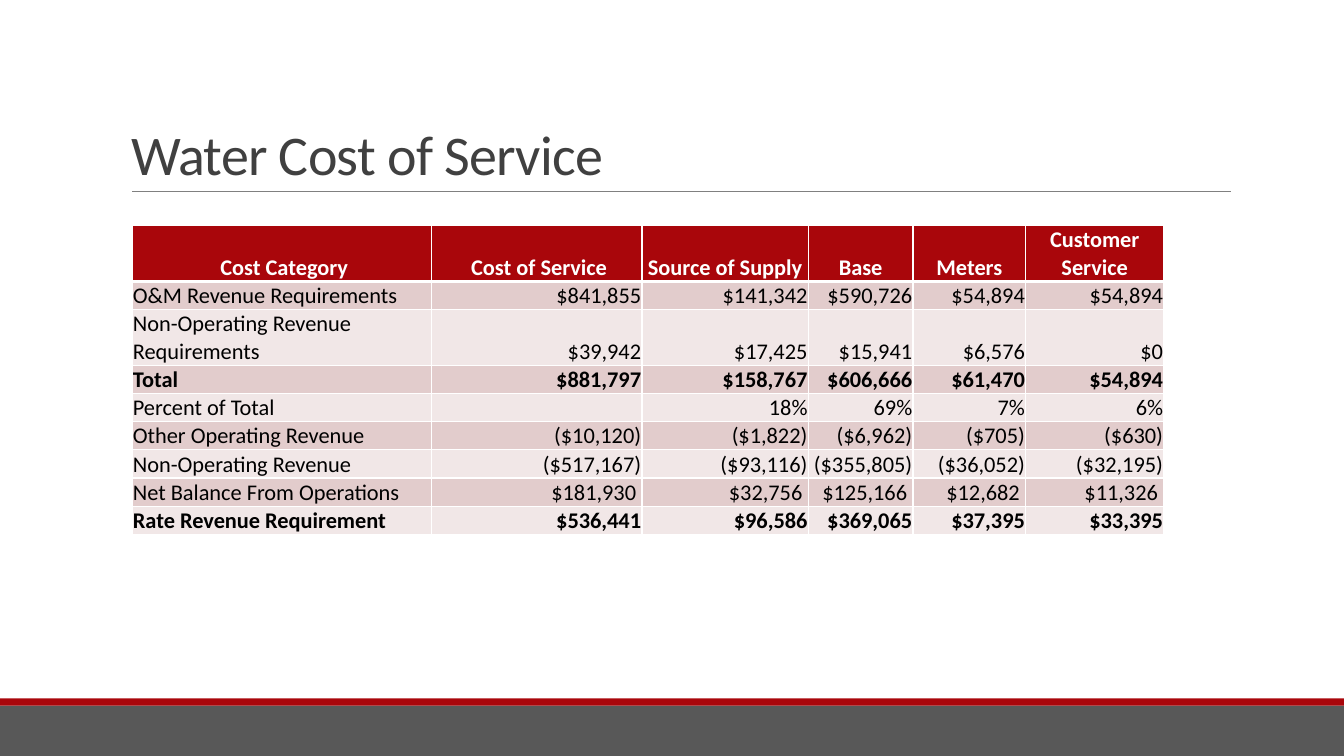
from dataclasses import dataclass

from lxml.etree import SubElement
from pptx import Presentation
from pptx.dml.color import RGBColor
from pptx.enum.shapes import MSO_CONNECTOR, MSO_SHAPE
from pptx.enum.text import MSO_ANCHOR, MSO_AUTO_SIZE, PP_ALIGN
from pptx.oxml.ns import qn
from pptx.slide import Slide
from pptx.table import _Cell
from pptx.util import Cm, Pt


@dataclass(frozen=True)
class Theme:
    font: str = "Calibri"
    title_size: float = 40
    table_size: float = 16
    title: str = "404040"
    rule: str = "808080"
    red: str = "A9060B"
    grey: str = "585858"
    dark_band: str = "E2CCCC"
    light_band: str = "F1E7E7"
    white: str = "FFFFFF"
    black: str = "000000"


@dataclass(frozen=True)
class Band:
    top: float
    height: float
    color: str


@dataclass(frozen=True)
class CostRow:
    category: str
    amounts: tuple[str, ...]
    bold: bool = False


@dataclass(frozen=True)
class CellStyle:
    fill: str
    color: str
    bold: bool
    align: PP_ALIGN
    top_border: float = 1
    bottom_border: float = 1


THEME = Theme()
PAGE_WIDTH, PAGE_HEIGHT = 33.87, 19.05
TABLE_LEFT, TABLE_TOP, ROW_HEIGHT = 3.33, 5.69, 0.71
COLUMN_WIDTHS = (7.54, 5.31, 4.19, 2.64, 2.84, 3.48)
BANDS = (Band(17.78, 1.27, THEME.grey), Band(17.6, 0.18, THEME.red))
HEADINGS = CostRow(
    " Cost Category",
    (" Cost of Service", "Source of Supply", "Base", "Meters", "Customer Service"),
    True,
)
COST_ROWS = (
    CostRow("O&M Revenue Requirements", ("$841,855", "$141,342", "$590,726", "$54,894", "$54,894")),
    CostRow("Non-Operating Revenue Requirements", ("$39,942", "$17,425", "$15,941", "$6,576", "$0")),
    CostRow("Total", ("$881,797", "$158,767", "$606,666", "$61,470", "$54,894"), True),
    CostRow("Percent of Total", ("", "18%", "69%", "7%", "6%")),
    CostRow("Other Operating Revenue", ("($10,120)", "($1,822)", "($6,962)", "($705)", "($630)")),
    CostRow("Non-Operating Revenue", ("($517,167)", "($93,116)", "($355,805)", "($36,052)", "($32,195)")),
    CostRow("Net Balance From Operations", ("$181,930 ", "$32,756 ", "$125,166 ", "$12,682 ", "$11,326 ")),
    CostRow("Rate Revenue Requirement", ("$536,441", "$96,586", "$369,065", "$37,395", "$33,395"), True),
)


def rgb(color: str) -> RGBColor:
    return RGBColor.from_string(color)


def draw_band(page: Slide, band: Band) -> None:
    box = page.shapes.add_shape(
        MSO_SHAPE.RECTANGLE, 0, Cm(band.top), Cm(PAGE_WIDTH), Cm(band.height)
    )
    box.shadow.inherit = False
    box.fill.solid()
    box.fill.fore_color.rgb = rgb(band.color)
    box.line.fill.background()


def draw_title_rule(page: Slide) -> None:
    rule = page.shapes.add_connector(
        MSO_CONNECTOR.STRAIGHT, Cm(3.33), Cm(4.83), Cm(31.01), Cm(4.83)
    )
    rule.line.color.rgb = rgb(THEME.rule)
    rule.line.width = Pt(0.5)
    SubElement(rule._element.spPr, qn("a:effectLst"))


def write_title(page: Slide, text: str) -> None:
    title = page.shapes.title
    title.left, title.top, title.width, title.height = Cm(3.05), Cm(0.79), Cm(27.94), Cm(4.04)
    frame = title.text_frame
    frame.text = text
    frame.word_wrap = True
    frame.auto_size = MSO_AUTO_SIZE.NONE
    frame.vertical_anchor = MSO_ANCHOR.BOTTOM
    para = frame.paragraphs[0]
    para.alignment = PP_ALIGN.LEFT
    para.line_spacing = 0.85
    span = para.runs[0]
    span.font.name = THEME.font
    span.font.size = Pt(THEME.title_size)
    span.font.color.rgb = rgb(THEME.title)
    span.font._element.set("spc", "-50")


def draw_borders(cell: _Cell, style: CellStyle) -> None:
    properties = cell._tc.get_or_add_tcPr()
    widths = {"lnL": 1, "lnR": 1, "lnT": style.top_border, "lnB": style.bottom_border}
    for side, width in widths.items():
        border = SubElement(properties, qn(f"a:{side}"), w=str(Pt(width)))
        fill = SubElement(border, qn("a:solidFill"))
        SubElement(fill, qn("a:srgbClr"), val=THEME.white)


def write_cell(cell: _Cell, text: str, style: CellStyle) -> None:
    cell.text_frame.text = text
    cell.vertical_anchor = MSO_ANCHOR.BOTTOM
    cell.margin_left = cell.margin_right = cell.margin_top = Cm(0.02)
    cell.margin_bottom = 0
    draw_borders(cell, style)
    cell.fill.solid()
    cell.fill.fore_color.rgb = rgb(style.fill)
    para = cell.text_frame.paragraphs[0]
    para.alignment = style.align
    for span in para.runs:
        span.font.name = THEME.font
        span.font.size = Pt(THEME.table_size)
        span.font.bold = style.bold
        span.font.color.rgb = rgb(style.color)
    if not text:
        para._p.get_or_add_endParaRPr().set("sz", str(THEME.table_size * 100))


def cell_style(row: int, column: int, bold: bool) -> CellStyle:
    if row == 0:
        return CellStyle(THEME.red, THEME.white, bold, PP_ALIGN.CENTER, bottom_border=3)
    return CellStyle(
        fill=THEME.dark_band if row % 2 else THEME.light_band,
        color=THEME.black,
        bold=bold,
        align=PP_ALIGN.RIGHT if column else PP_ALIGN.LEFT,
        top_border=3 if row == 1 else 1,
    )


def draw_cost_table(page: Slide) -> None:
    rows = (HEADINGS, *COST_ROWS)
    table = page.shapes.add_table(
        len(rows), len(COLUMN_WIDTHS), Cm(TABLE_LEFT), Cm(TABLE_TOP),
        Cm(sum(COLUMN_WIDTHS)), Cm(ROW_HEIGHT * len(rows)),
    ).table
    for column, width in zip(table.columns, COLUMN_WIDTHS):
        column.width = Cm(width)
    for row_number, cost in enumerate(rows):
        table.rows[row_number].height = Cm(ROW_HEIGHT)
        for column_number, text in enumerate((cost.category, *cost.amounts)):
            style = cell_style(row_number, column_number, cost.bold)
            write_cell(table.cell(row_number, column_number), text, style)


def main() -> None:
    deck = Presentation()
    deck.slide_width, deck.slide_height = Cm(PAGE_WIDTH), Cm(PAGE_HEIGHT)
    page = deck.slides.add_slide(deck.slide_layouts.get_by_name("Title Only"))
    for band in BANDS:
        draw_band(page, band)
    draw_title_rule(page)
    write_title(page, "Water Cost of Service")
    draw_cost_table(page)
    deck.save("out.pptx")


if __name__ == "__main__":
    main()
